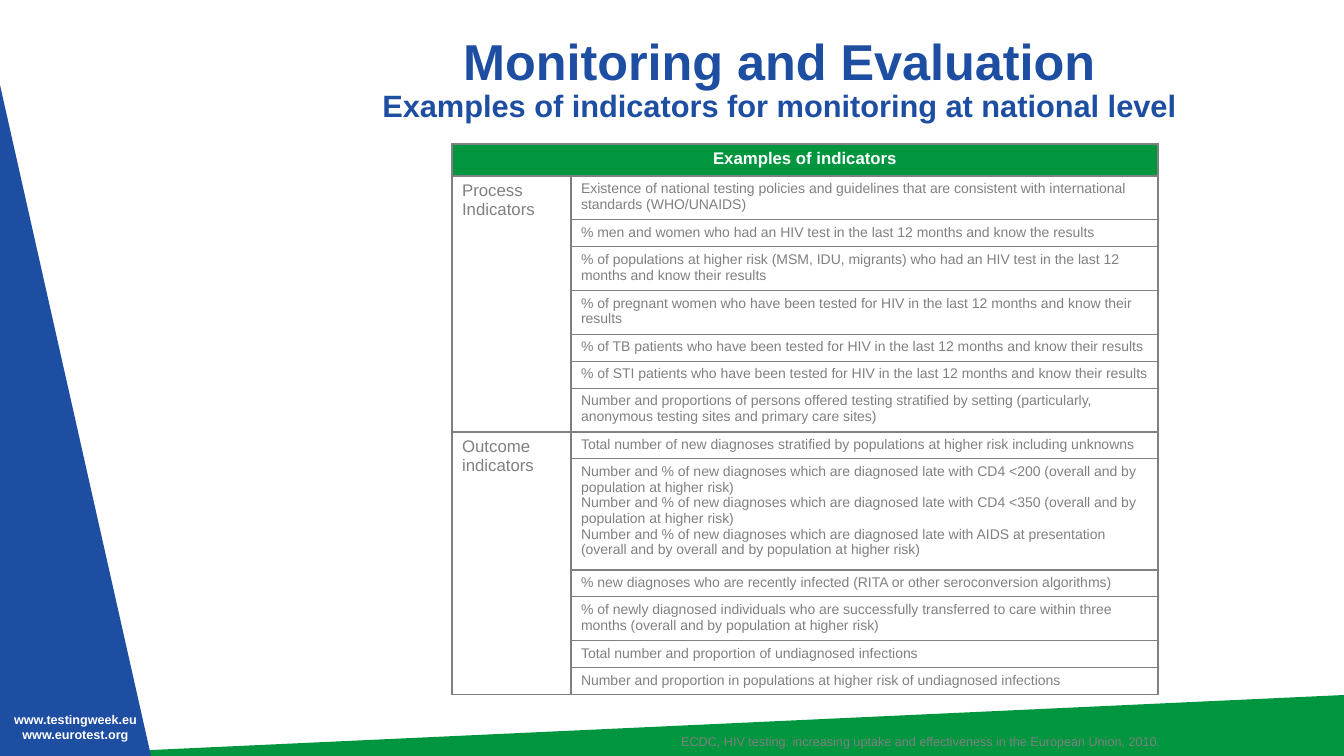
from lxml.etree import SubElement
from pptx import Presentation
from pptx.dml.color import RGBColor
from pptx.enum.shapes import MSO_SHAPE
from pptx.enum.text import MSO_ANCHOR, PP_ALIGN
from pptx.oxml import parse_xml
from pptx.oxml.ns import nsdecls, qn
from pptx.util import Pt

PX = 12192000 / 1344
BLUE, GREEN, GREY, WHITE = "1D4EA2", "009640", "808080", "FFFFFF"


def rgb(value):
    return RGBColor.from_string(value)


def style(paragraph, sizes, color, bold=False, align=PP_ALIGN.LEFT):
    paragraph.alignment = align
    for run, size in zip(paragraph.runs, sizes):
        run.font.name = "Arial"
        run.font.size = Pt(size)
        run.font.bold = bold
        run.font.color.rgb = rgb(color)


presentation = Presentation()
presentation.slide_width = round(1344 * PX)
presentation.slide_height = round(756 * PX)
slide = presentation.slides.add_slide(presentation.slide_layouts[6])

wedges = [
    ((641, 54, 62, 1344), 270, GREEN),
    ((0, 85, 151, 671), 0, BLUE),
]
for box, rotation, color in wedges:
    wedge = slide.shapes.add_shape(MSO_SHAPE.RIGHT_TRIANGLE, *[round(n * PX) for n in box])
    wedge.rotation = rotation
    wedge.shadow.inherit = False
    wedge.fill.solid()
    wedge.fill.fore_color.rgb = rgb(color)
    wedge.line.fill.background()

captions = [
    ((-8, 707, 167, 40), ["www.testingweek.eu", "www.eurotest.org"],
     [9], WHITE, True, PP_ALIGN.CENTER, MSO_ANCHOR.TOP, None),
    ((241, 21, 1077, 119),
     ["Monitoring and Evaluation\vExamples of indicators for monitoring at national level"],
     [36, 22], BLUE, True, PP_ALIGN.CENTER, MSO_ANCHOR.MIDDLE, 0.9),
    ((569, 729, 601, 25),
     ["ECDC, HIV testing: increasing uptake and effectiveness in the European Union, 2010."],
     [9], GREY, False, PP_ALIGN.RIGHT, MSO_ANCHOR.TOP, None),
]
for box, lines, sizes, color, bold, align, anchor, spacing in captions:
    frame = slide.shapes.add_textbox(*[round(n * PX) for n in box]).text_frame
    frame.word_wrap = True
    frame.vertical_anchor = anchor
    frame.text = "\n".join(lines)
    for paragraph in frame.paragraphs:
        paragraph.line_spacing = spacing
        style(paragraph, sizes, color, bold, align)

indicator_groups = {
    "Process Indicators": [
        (41, ["Existence of national testing policies and guidelines that are consistent with international standards (WHO/UNAIDS)"]),
        (26, ["% men and women who had an HIV test in the last 12 months and know the results"]),
        (41, ["% of populations at higher risk (MSM, IDU, migrants) who had an HIV test in the last 12 months and know their results"]),
        (41, ["% of pregnant women who have been tested for HIV in the last 12 months and know their results"]),
        (26, ["% of TB patients who have been tested for HIV in the last 12 months and know their results"]),
        (26, ["% of STI patients who have been tested for HIV in the last 12 months and know their results"]),
        (41, ["Number and proportions of persons offered testing stratified by setting (particularly, anonymous testing sites and primary care sites)"]),
    ],
    "Outcome indicators": [
        (26, ["Total number of new diagnoses stratified by populations at higher risk including unknowns"]),
        (104, [
            "Number and % of new diagnoses which are diagnosed late with CD4 <200 (overall and by population at higher risk)",
            "Number and % of new diagnoses which are diagnosed late with CD4 <350 (overall and by population at higher risk)",
            "Number and % of new diagnoses which are diagnosed late with AIDS at presentation (overall and by overall and by population at higher risk)",
        ]),
        (26, ["% new diagnoses who are recently infected (RITA or other seroconversion algorithms)"]),
        (41, ["% of newly diagnosed individuals who are successfully transferred to care within three months (overall and by population at higher risk)"]),
        (26, ["Total number and proportion of undiagnosed infections"]),
        (26, ["Number and proportion in populations at higher risk of undiagnosed infections"]),
    ],
}
row_heights = [32] + [height for group in indicator_groups.values() for height, _ in group]
indicators = slide.shapes.add_table(
    len(row_heights), 2,
    *[round(n * PX) for n in (452, 144, 706, sum(row_heights))]).table
indicators.horz_banding = False
for column, width in zip(indicators.columns, (119, 587)):
    column.width = round(width * PX)
for row, height in zip(indicators.rows, row_heights):
    row.height = round(height * PX)

for row_index, row in enumerate(indicators.rows):
    for cell in row.cells:
        cell.fill.solid()
        cell.fill.fore_color.rgb = rgb(WHITE if row_index else GREEN)
        properties = cell._tc.get_or_add_tcPr()
        for position, side in enumerate(("lnL", "lnR", "lnT", "lnB")):
            border = parse_xml(f'<a:{side} {nsdecls("a")} w="12700"/>')
            fill = SubElement(border, qn("a:solidFill"))
            SubElement(fill, qn("a:srgbClr"), val=GREY)
            properties.insert(position, border)

heading = indicators.cell(0, 0)
heading.merge(indicators.cell(0, 1))
heading.text_frame.text = "Examples of indicators"
style(heading.text_frame.paragraphs[0], [12], WHITE, True, PP_ALIGN.CENTER)

first_row = 1
for group_name, entries in indicator_groups.items():
    group_cell = indicators.cell(first_row, 0)
    group_cell.merge(indicators.cell(first_row + len(entries) - 1, 0))
    group_cell.text_frame.text = group_name
    style(group_cell.text_frame.paragraphs[0], [12], GREY)
    for row_index, (_, lines) in enumerate(entries, first_row):
        entry_frame = indicators.cell(row_index, 1).text_frame
        entry_frame.text = "\n".join(lines)
        for paragraph in entry_frame.paragraphs:
            style(paragraph, [10], GREY)
    first_row += len(entries)

presentation.save("out.pptx")
